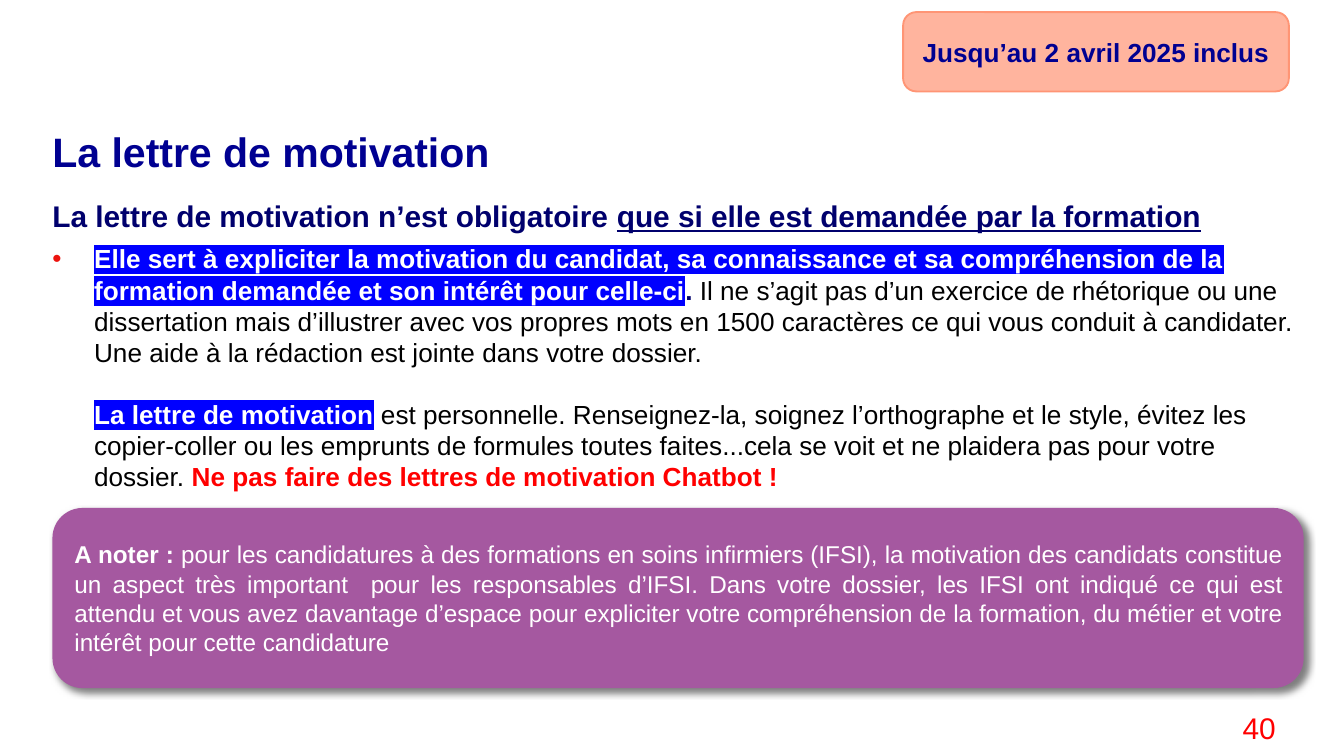
from lxml import etree
from pptx import Presentation
from pptx import util as u
from pptx.dml.color import RGBColor
from pptx.enum import shapes, text
from pptx.oxml import ns

NAVY, DEEP_NAVY, BLUE = "000091", "00006D", "0000FF"
WHITE, BLACK, RED = "FFFFFF", "000000", "FF0000"
PURPLE, SALMON = "A558A0", "FF9575"
LEFT, ALIGN = 0.39, text.PP_ALIGN


def color(value):
    return RGBColor.from_string(value)


def write(para, words, size=14, ink=BLACK, bold=False, underline=False, marker=None):
    """Add one formatted span, optionally highlighted with the marker colour."""
    span = para.add_run()
    span.text = words
    span.font.name = "Arial"
    span.font.size = u.Pt(size)
    span.font.bold = bold
    span.font.underline = underline
    span.font.color.rgb = color(ink)
    if marker:
        highlight = etree.Element(ns.qn("a:highlight"))
        etree.SubElement(highlight, ns.qn("a:srgbClr"), val=marker)
        span.font._element.find(ns.qn("a:solidFill")).addnext(highlight)


# Widescreen page, 16:9
deck = Presentation()
deck.slide_width = u.Inches(10)
deck.slide_height = u.Inches(10 * 9 / 16)
page = deck.slides.add_slide(deck.slide_layouts[6])

# Text boxes: title, body, page number
frames = []
for left, top, width, height, inset in (
    (LEFT, 0.98, 9.21, 0.79, 0),
    (LEFT, 1.47, 9.31, 3.54, 0),
    (8.31, 5.23, 1.28, 0.39, 0.1),
):
    box = page.shapes.add_textbox(
        u.Inches(left), u.Inches(top), u.Inches(width), u.Inches(height))
    frame = box.text_frame
    frame.word_wrap = True
    frame.margin_left = frame.margin_right = u.Inches(inset)
    frame.margin_top = frame.margin_bottom = u.Inches(inset / 2)
    frames.append(frame)
title, body, number = frames

# Title
para = title.paragraphs[0]
para.line_spacing = 0.9
write(para, "La lettre de motivation", size=22, ink=NAVY, bold=True)

# Page number
para = number.paragraphs[0]
para.alignment = ALIGN.RIGHT
write(para, "40", size=16, ink=RED)

# Body heading
heading = body.paragraphs[0]
heading.space_after = u.Pt(5)
write(heading, "La lettre de motivation n’est obligatoire ", size=16, ink=DEEP_NAVY, bold=True)
write(heading, "que si elle est demandée par la formation", size=16, ink=DEEP_NAVY,
      bold=True, underline=True)

# Body paragraphs: a bulleted one, then one aligned with its text
purpose, advice = body.add_paragraph(), body.add_paragraph()
indent = u.Inches(0.31)
for para, hanging, gap in ((purpose, -indent, 16), (advice, 0, 5)):
    props = para._p.get_or_add_pPr()
    props.set("marL", str(indent))
    props.set("indent", str(hanging))
    para.space_after = u.Pt(gap)
props = purpose._p.get_or_add_pPr()
bullet_color = etree.SubElement(props, ns.qn("a:buClr"))
etree.SubElement(bullet_color, ns.qn("a:srgbClr"), val="EC130E")
etree.SubElement(props, ns.qn("a:buFont"), typeface="Arial")
etree.SubElement(props, ns.qn("a:buChar"), char="•")

write(purpose, "Elle sert à expliciter la motivation du candidat, sa connaissance et sa "
      "compréhension de la formation demandée et son intérêt pour celle-ci",
      ink=WHITE, bold=True, marker=BLUE)
write(purpose, ". ", ink=DEEP_NAVY, bold=True)
write(purpose, "Il ne s’agit pas d’un exercice de rhétorique ou une dissertation mais "
      "d’illustrer avec vos propres mots en 1500 caractères ce qui vous conduit à candidater. "
      "Une aide à la rédaction est jointe dans votre dossier.")
write(advice, "La lettre de motivation", ink=WHITE, bold=True, marker=BLUE)
write(advice, " est personnelle. Renseignez-la, soignez l’orthographe et le style, évitez les "
      "copier-coller ou les emprunts de formules toutes faites...cela se voit et ne plaidera "
      "pas pour votre dossier. ")
write(advice, "Ne pas faire des lettres de motivation Chatbot !", ink=RED, bold=True)

# Rounded panels: note and deadline
panels = []
for left, top, width, height, fill, align in (
    (LEFT, 3.78, 9.31, 1.34, PURPLE, ALIGN.JUSTIFY),
    (6.72, 0.09, 2.87, 0.59, SALMON, ALIGN.CENTER),
):
    panel = page.shapes.add_shape(
        shapes.MSO_SHAPE.ROUNDED_RECTANGLE,
        u.Inches(left), u.Inches(top), u.Inches(width), u.Inches(height))
    panel.shadow.inherit = False
    panel.fill.solid()
    panel.fill.fore_color.rgb = color(fill)
    panel.text_frame.word_wrap = True
    panel.text_frame.vertical_anchor = text.MSO_ANCHOR.MIDDLE
    panel.text_frame.paragraphs[0].alignment = align
    panels.append(panel)
note, deadline = panels

# Note with a soft shadow to the lower right
note.line.fill.background()
shadow = etree.SubElement(
    note._element.spPr.find(ns.qn("a:effectLst")), ns.qn("a:outerShdw"),
    blurRad=str(u.Pt(4)), dist=str(u.Pt(3)), dir=str(45 * 60000), algn="tl", rotWithShape="0")
shade = etree.SubElement(shadow, ns.qn("a:srgbClr"), val=BLACK)
etree.SubElement(shade, ns.qn("a:alpha"), val="50000")
para = note.text_frame.paragraphs[0]
write(para, "A noter : ", size=13, ink=WHITE, bold=True)
write(para, "pour les candidatures à des formations en soins infirmiers (IFSI), la motivation "
      "des candidats constitue un aspect très important  pour les responsables d’IFSI. Dans "
      "votre dossier, les IFSI ont indiqué ce qui est attendu et vous avez davantage d’espace "
      "pour expliciter votre compréhension de la formation, du métier et votre intérêt pour "
      "cette candidature", size=13, ink=WHITE)

# Deadline with a translucent fill
deadline.line.color.rgb = color(SALMON)
deadline.line.width = u.Pt(1)
tint = deadline._element.spPr.find(ns.qn("a:solidFill"))[0]
etree.SubElement(tint, ns.qn("a:alpha"), val="70000")
write(deadline.text_frame.paragraphs[0], "Jusqu’au 2 avril 2025 inclus", ink=NAVY, bold=True)

deck.save("out.pptx")
